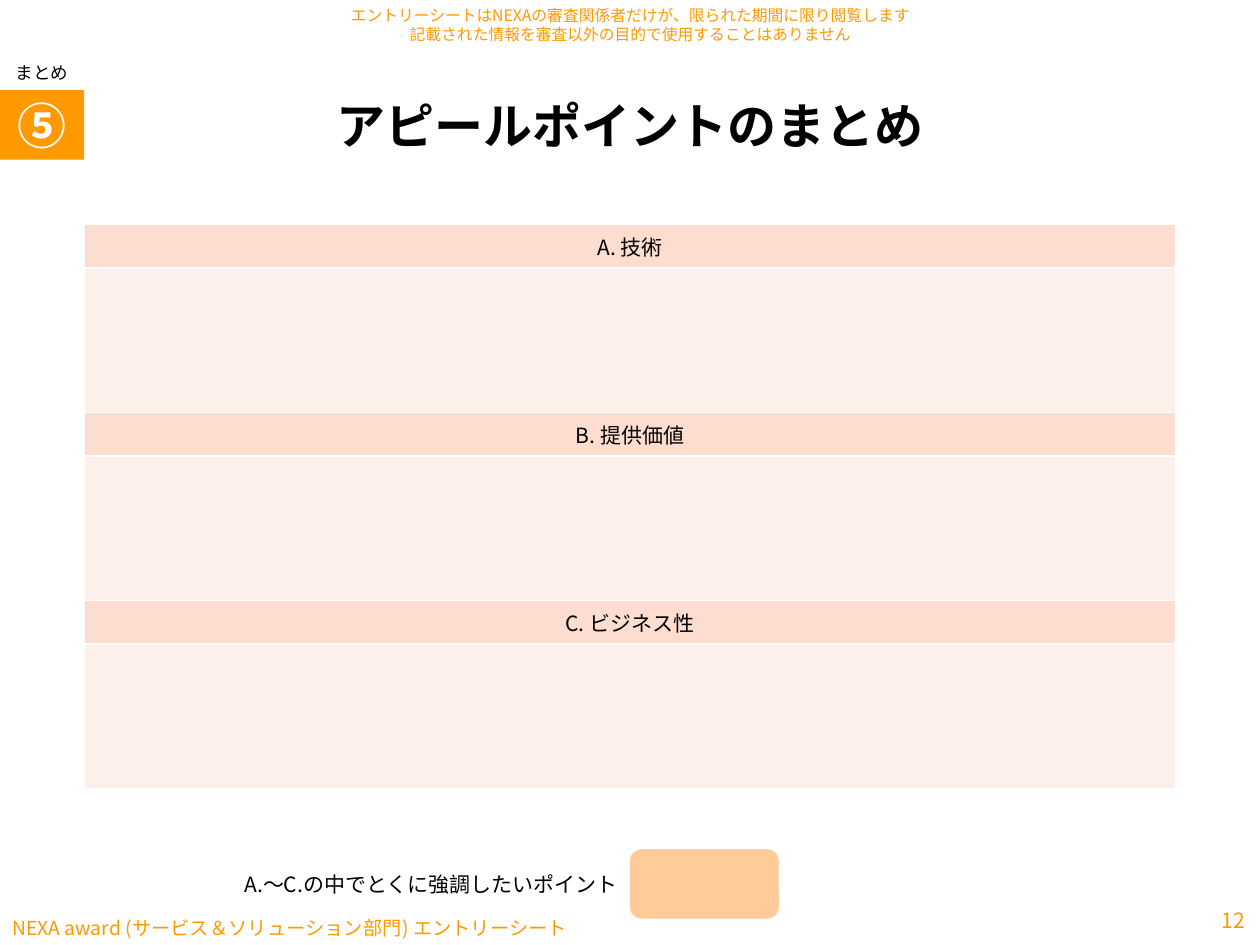
import dataclasses

import pptx
import pptx.dml.color
import pptx.enum.shapes
import pptx.enum.text
import pptx.oxml
import pptx.oxml.ns
import pptx.util

Cm = pptx.util.Cm
ALIGN = pptx.enum.text.PP_ALIGN
ANCHOR = pptx.enum.text.MSO_ANCHOR
SHAPE = pptx.enum.shapes.MSO_SHAPE


@dataclasses.dataclass(frozen=True)
class Theme:
    font: str = "Noto Sans CJK JP"
    ink: str = "000000"
    white: str = "FFFFFF"
    accent: str = "FF9900"
    answer: str = "FFCC99"
    heading_fill: str = "FCDDCF"
    entry_fill: str = "FDEFE9"
    title: int = 28
    body: int = 12
    footer: int = 11
    label: int = 10
    notice: int = 9


THEME = Theme()


def rgb(value):
    return pptx.dml.color.RGBColor.from_string(value)


def write(frame, text, size, color=THEME.ink, align=ALIGN.LEFT, bold=False):
    """Set the text, then format every run, including its East Asian font."""
    frame.text = text
    for para in frame.paragraphs:
        para.alignment = align
        for span in para.runs:
            span.font.name = THEME.font
            span.font.size = pptx.util.Pt(size)
            span.font.bold = bold
            span.font.color.rgb = rgb(color)
            east_asian = pptx.oxml.parse_xml(
                f'<a:ea {pptx.oxml.ns.nsdecls("a")} typeface="{THEME.font}"/>')
            span.font._element.find(pptx.oxml.ns.qn("a:latin")).addnext(east_asian)


def add_label(page, box, text, size, anchor=ANCHOR.MIDDLE, **style):
    frame = page.shapes.add_textbox(*box).text_frame
    frame.word_wrap = True
    frame.vertical_anchor = anchor
    write(frame, text, size, **style)


def add_block(page, kind, box, fill):
    block = page.shapes.add_shape(kind, *box)
    block.shadow.inherit = False
    block.fill.solid()
    block.fill.fore_color.rgb = rgb(fill)
    block.line.fill.background()
    return block


def add_frame_texts(page, left, top, width, height):
    """Notice at the top edge, form name and page number at the bottom edge."""
    bottom = top + height
    add_label(page, (left, bottom - Cm(0.69), Cm(12.6), Cm(0.69)),
              "NEXA award (サービス＆ソリューション部門) エントリーシート",
              THEME.footer, color=THEME.accent)
    notice_width = Cm(12.8)
    add_label(page, (left + (width - notice_width) // 2, top, notice_width, Cm(1)),
              "エントリーシートはNEXAの審査関係者だけが、限られた期間に限り閲覧します\v"
              "記載された情報を審査以外の目的で使用することはありません",
              THEME.notice, anchor=ANCHOR.TOP, color=THEME.accent, align=ALIGN.CENTER)
    add_label(page, (left + Cm(23.5), bottom - Cm(1.02), Cm(1.85), Cm(1.02)), "12",
              THEME.body, color=THEME.accent, align=ALIGN.RIGHT)


def add_heading(page, left, top, width, height):
    """Section label, number badge and centred title."""
    badge_width = Cm(1.7)
    add_label(page, (left, top, badge_width, Cm(0.53)), "まとめ", THEME.label,
              anchor=ANCHOR.TOP, align=ALIGN.CENTER)
    badge = add_block(page, SHAPE.RECTANGLE,
                      (left, top + Cm(0.7), badge_width, Cm(1.4)), THEME.accent)
    badge.text_frame.vertical_anchor = ANCHOR.MIDDLE
    write(badge.text_frame, "⑤", THEME.title, THEME.white, ALIGN.CENTER, True)

    title = page.shapes.title
    title.width, title.height = Cm(20), Cm(2)
    title.left = left + (width - title.width) // 2
    title.top = top + height - title.height
    title.text_frame.vertical_anchor = ANCHOR.MIDDLE
    write(title.text_frame, "アピールポイントのまとめ", THEME.title,
          align=ALIGN.CENTER, bold=True)


def set_borders(cell):
    properties = cell._tc.get_or_add_tcPr()
    for index, side in enumerate(("lnL", "lnR", "lnT", "lnB")):
        properties.insert(index, pptx.oxml.parse_xml(
            f'<a:{side} {pptx.oxml.ns.nsdecls("a")} w="12700"><a:solidFill>'
            f'<a:srgbClr val="{THEME.white}"/></a:solidFill></a:{side}>'))


def add_points_table(page, left, top, width, height):
    """Heading rows alternating with empty entry rows."""
    headings = ("A. 技術", "B. 提供価値", "C. ビジネス性")
    heading_height = Cm(0.87)
    entry_height = height // len(headings) - heading_height
    table = page.shapes.add_table(2 * len(headings), 1, left, top, width, height).table
    for index, row in enumerate(table.rows):
        is_entry = index % 2
        row.height = entry_height if is_entry else heading_height
        cell = row.cells[0]
        cell.fill.solid()
        cell.fill.fore_color.rgb = rgb(THEME.entry_fill if is_entry else THEME.heading_fill)
        set_borders(cell)
        if not is_entry:
            cell.vertical_anchor = ANCHOR.MIDDLE
            write(cell.text_frame, headings[index // 2], THEME.body, align=ALIGN.CENTER)


def add_answer(page, left, top, width, height):
    """Question on the left, answer field on the right."""
    field_width, question_height = Cm(3), Cm(1)
    question_width = width - field_width
    add_label(page, (left, top + Cm(0.2), question_width, question_height),
              "A.～C.の中でとくに強調したいポイント", THEME.body, align=ALIGN.RIGHT)
    add_block(page, SHAPE.ROUNDED_RECTANGLE,
              (left + question_width, top, field_width, height), THEME.answer)


def main():
    deck = pptx.Presentation()
    deck.slide_width, deck.slide_height = Cm(25.4), Cm(19.05)
    page = deck.slides.add_slide(deck.slide_layouts[5])
    add_frame_texts(page, 0, 0, deck.slide_width, deck.slide_height)
    add_heading(page, 0, Cm(1.12), deck.slide_width, Cm(2.4))
    add_points_table(page, Cm(1.7), Cm(4.53), Cm(22), Cm(11.37))
    add_answer(page, Cm(3.9), Cm(17.12), Cm(11.8), Cm(1.4))
    deck.save("out.pptx")


if __name__ == "__main__":
    main()
